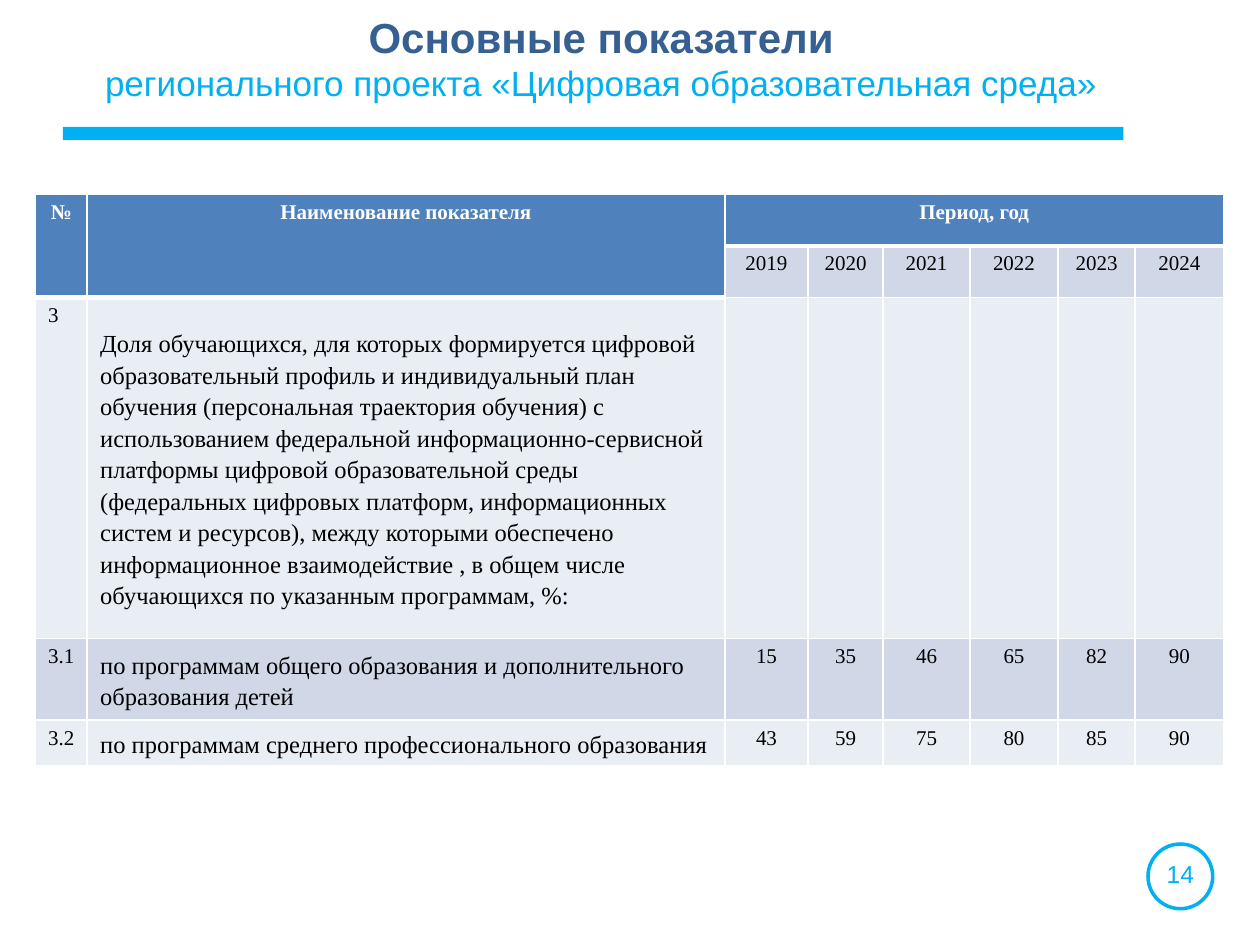
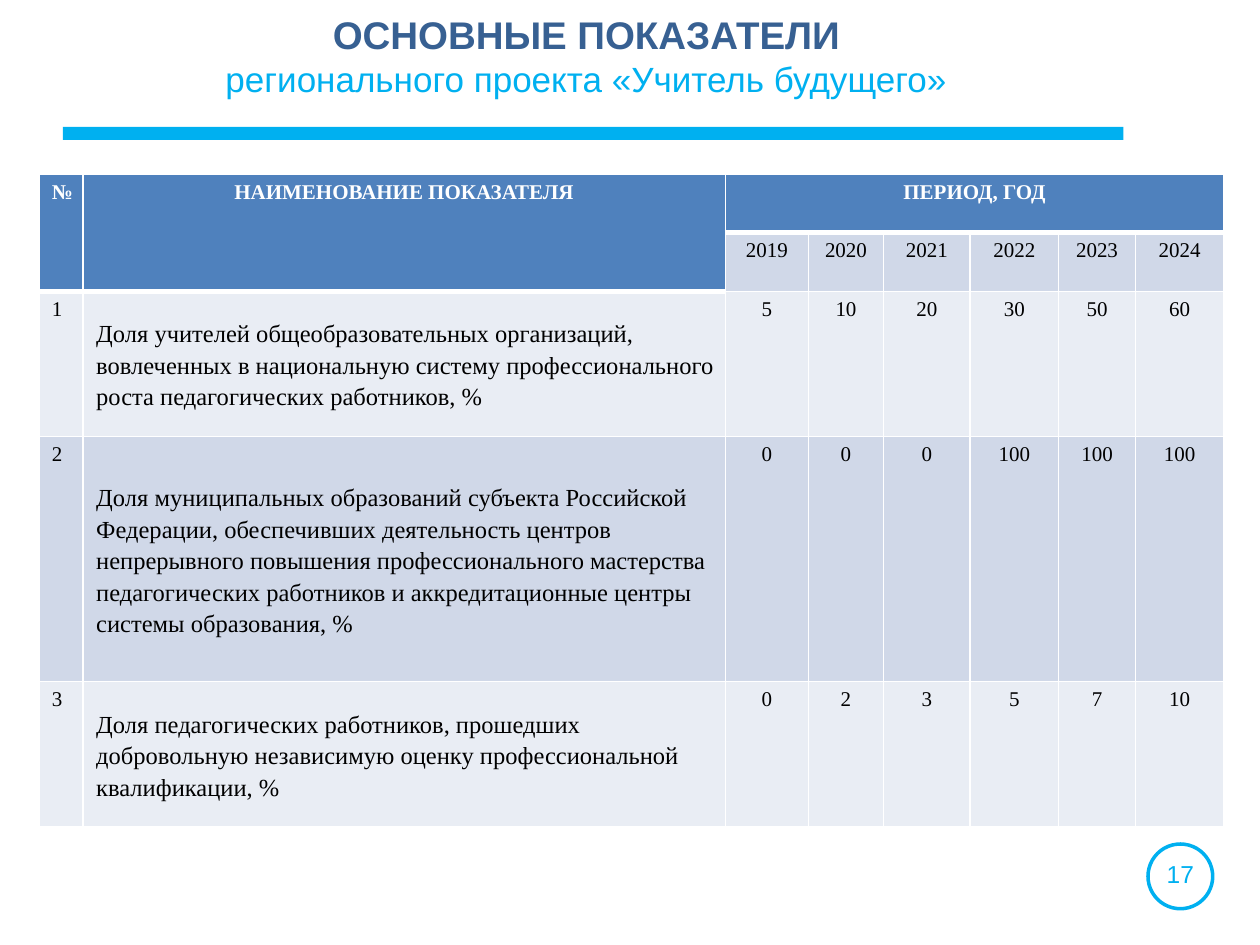
from lxml.etree import SubElement
from pptx import Presentation
from pptx.dml.color import RGBColor
from pptx.enum.shapes import MSO_SHAPE as Preset
from pptx.enum.text import MSO_ANCHOR as Anchor, PP_ALIGN as Align
from pptx.oxml.ns import qn
from pptx.util import Pt

SKY, NAVY, HEADER, WHITE, BLACK = "00B0F0", "376092", "4F81BD", "FFFFFF", "000000"
BANDS = ["E9EDF4", "D0D8E8"]
SANS, SERIF = "Arial", "Times New Roman"
YEARS = range(2019, 2025)
YEAR_WIDTHS = [47.5, 43, 49.5, 50.5, 44, 50.5]

NO_INSETS = dict(margin_left=0, margin_right=0, margin_top=0, margin_bottom=0)
TITLE_FRAME = dict(word_wrap=True, margin_top=Pt(6.5), vertical_anchor=Anchor.TOP)
NUMBER_FRAME = dict(NO_INSETS, word_wrap=True, vertical_anchor=Anchor.MIDDLE)
INDICATOR_CELL = dict(NO_INSETS, margin_left=Pt(1.5), margin_right=Pt(1.5),
                      vertical_anchor=Anchor.MIDDLE)
HEADING = dict(name=SERIF, size=Pt(12), bold=True)
FIGURE = dict(name=SERIF, size=Pt(12), bold=False)
INDICATOR = dict(name=SERIF, size=Pt(14), bold=False)

PROJECTS = [
    dict(
        number=14,
        title="Основные показатели", title_size=24,
        project="регионального проекта «Цифровая образовательная среда»",
        title_box=(19.5, 0, 648, 102),
        headings=("№", "Наименование показателя", "Период, год"),
        table_at=(20.3, 111), label_widths=(29.5, 364.5),
        heights=(29.5, 29.5, 195, 46.5, 26),
        indicators=[
            ("3", "Доля обучающихся, для которых формируется цифровой образовательный "
                  "профиль и индивидуальный план обучения (персональная траектория "
                  "обучения) с использованием федеральной информационно-сервисной "
                  "платформы цифровой образовательной среды (федеральных цифровых "
                  "платформ, информационных систем и ресурсов), между которыми "
                  "обеспечено информационное взаимодействие , в общем числе "
                  "обучающихся по указанным программам, %:", []),
            ("3.1", "по программам общего образования и дополнительного образования детей",
             [15, 35, 46, 65, 82, 90]),
            ("3.2", "по программам среднего профессионального образования",
             [43, 59, 75, 80, 85, 90]),
        ],
    ),
    dict(
        number=17,
        title="ОСНОВНЫЕ ПОКАЗАТЕЛИ", title_size=22,
        project="регионального проекта «Учитель будущего»",
        title_box=(28, 0, 614, 57),
        headings=("№", "НАИМЕНОВАНИЕ ПОКАЗАТЕЛЯ", "ПЕРИОД, ГОД"),
        table_at=(22.5, 99.5), label_widths=(25, 367),
        heights=(33.5, 33.5, 83, 140, 83),
        indicators=[
            ("1", "Доля учителей общеобразовательных организаций, вовлеченных в "
                  "национальную систему профессионального роста педагогических "
                  "работников, %", [5, 10, 20, 30, 50, 60]),
            ("2", "Доля муниципальных образований субъекта Российской Федерации, "
                  "обеспечивших деятельность центров непрерывного повышения "
                  "профессионального мастерства педагогических работников и "
                  "аккредитационные центры системы образования, %",
             [0, 0, 0, 100, 100, 100]),
            ("3", "Доля педагогических работников, прошедших добровольную независимую "
                  "оценку профессиональной квалификации, %", [0, 2, 3, 5, 7, 10]),
        ],
    ),
]


def rgb(code):
    """Turn a hex string into a colour."""
    return RGBColor.from_string(code)


def set_values(target, formats):
    """Set each format value as an attribute of the target."""
    for attribute, value in formats.items():
        setattr(target, attribute, value)


def write(paragraph, text, font, color, align=Align.CENTER):
    """Put one formatted run into a paragraph."""
    paragraph.alignment = align
    run = paragraph.add_run()
    run.text = str(text)
    set_values(run.font, font)
    run.font.color.rgb = rgb(color)


def add_text(slide, box, frame_format, lines):
    """Add a text box with one (text, font, colour) line per paragraph."""
    frame = slide.shapes.add_textbox(*map(Pt, box)).text_frame
    set_values(frame, frame_format)
    for index, line in enumerate(lines):
        write(frame.add_paragraph() if index else frame.paragraphs[0], *line)


def add_preset(slide, preset, box):
    """Add a preset shape without shadow."""
    shape = slide.shapes.add_shape(preset, *map(Pt, box))
    shape.shadow.inherit = False
    return shape


def add_frame(slide, number):
    """Add the rule under the title and the ringed page number."""
    rule = add_preset(slide, Preset.RECTANGLE, (36, 72.5, 606, 7.5))
    rule.fill.solid()
    rule.fill.fore_color.rgb = rgb(SKY)
    rule.line.fill.background()
    ring = add_preset(slide, Preset.OVAL, (656, 482.3, 37, 37))
    ring.fill.background()
    ring.line.color.rgb = rgb(SKY)
    ring.line.width = Pt(2)
    add_text(slide, (653.5, 487.5, 42, 24), NUMBER_FRAME,
             [(number, dict(name=SANS, size=Pt(14)), SKY)])


def style_cell(cell, color, bottom=1):
    """Give a cell white borders and a solid fill."""
    properties = cell._tc.get_or_add_tcPr()
    for side, width in dict(lnL=1, lnR=1, lnT=1, lnB=bottom).items():
        border = SubElement(properties, qn(f"a:{side}"), w=str(Pt(width)))
        SubElement(SubElement(border, qn("a:solidFill")), qn("a:srgbClr"), val=WHITE)
    cell.fill.solid()
    cell.fill.fore_color.rgb = rgb(color)


def write_cell(cell, text, font, color=BLACK, align=Align.CENTER):
    """Write the single paragraph of a cell."""
    write(cell.text_frame.paragraphs[0], text, font, color, align)


def write_indicator(cell, text):
    """Write an indented indicator name with fixed line spacing."""
    set_values(cell, INDICATOR_CELL)
    paragraph = cell.text_frame.paragraphs[0]
    paragraph.line_spacing = Pt(18)
    paragraph._p.get_or_add_pPr().set("marL", str(Pt(6)))
    write(paragraph, text, INDICATOR, BLACK, Align.LEFT)


def add_header(table, headings):
    """Fill the two header rows and merge their cells."""
    for column in range(len(table.columns)):
        is_label = column < 2
        style_cell(table.cell(0, column), HEADER, bottom=3)
        style_cell(table.cell(1, column), HEADER if is_label else BANDS[1],
                   bottom=3 if is_label else 1)
    for column, (heading, end) in enumerate(zip(headings, [(1, 0), (1, 1), (0, 7)])):
        cell = table.cell(0, column)
        cell.merge(table.cell(*end))
        write_cell(cell, heading, HEADING, WHITE)
    for column, year in enumerate(YEARS, 2):
        write_cell(table.cell(1, column), year, FIGURE)


def add_indicators(slide, project):
    """Add the table of indicators by year."""
    widths = [*project["label_widths"], *YEAR_WIDTHS]
    heights = project["heights"]
    box = (*project["table_at"], sum(widths), sum(heights))
    table = slide.shapes.add_table(len(heights), len(widths), *map(Pt, box)).table
    set_values(table, dict(first_row=False, horz_banding=False))
    for column, width in zip(table.columns, widths):
        column.width = Pt(width)
    for row, height in zip(table.rows, heights):
        row.height = Pt(height)
    add_header(table, project["headings"])
    for row, (code, indicator, figures) in enumerate(project["indicators"], 2):
        for column in range(len(widths)):
            style_cell(table.cell(row, column), BANDS[row % 2])
        write_cell(table.cell(row, 0), code, FIGURE, align=Align.LEFT)
        write_indicator(table.cell(row, 1), indicator)
        for column, figure in enumerate(figures, 2):
            write_cell(table.cell(row, column), figure, FIGURE)


def main():
    """Build one slide per regional project."""
    deck = Presentation()
    set_values(deck, dict(slide_width=Pt(720), slide_height=Pt(540)))
    for project in PROJECTS:
        slide = deck.slides.add_slide(deck.slide_layouts[6])
        add_frame(slide, project["number"])
        title_font = dict(name=SANS, size=Pt(project["title_size"]), bold=True)
        add_text(slide, project["title_box"], TITLE_FRAME, [
            (project["title"], title_font, NAVY),
            (project["project"], dict(name=SANS, size=Pt(20)), SKY),
        ])
        add_indicators(slide, project)
    deck.save("out.pptx")


if __name__ == "__main__":
    main()
